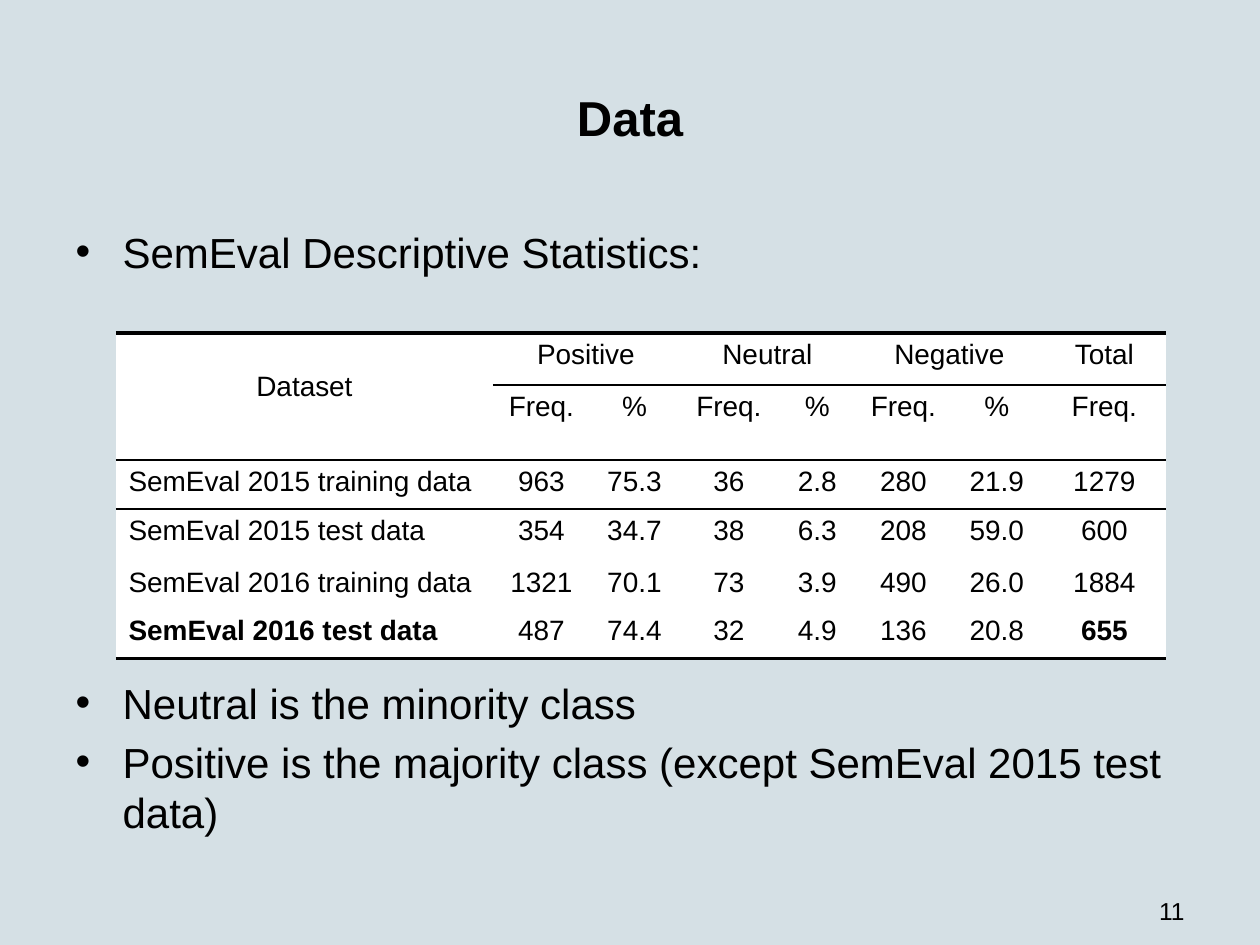
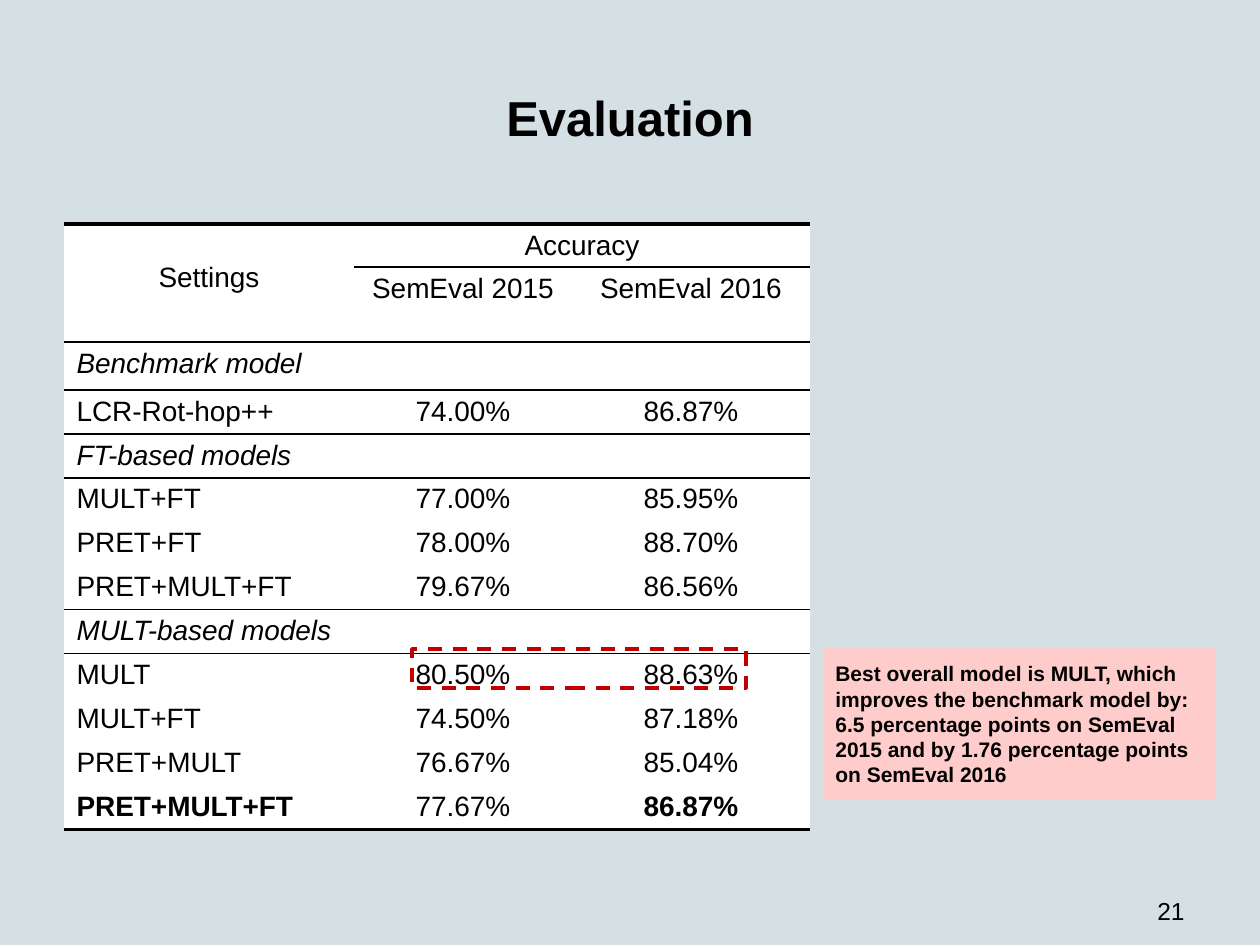
from collections import namedtuple
from dataclasses import dataclass

from lxml import etree
from pptx import Presentation
from pptx import util as u
from pptx.dml.color import RGBColor
from pptx.enum import dml, shapes, text
from pptx.oxml import ns

EMU_PER_PX = 914400 / 126
Box = namedtuple("Box", "left top width height")


@dataclass(frozen=True)
class Theme:
    font: str = "Arial"
    background: str = "D5E0E5"
    ink: str = "000000"
    paper: str = "FFFFFF"
    callout: str = "FFCCCC"
    highlight: str = "C00000"
    title: int = 28
    body: int = 24
    cell: int = 16
    number: int = 14
    note: int = 12
    heavy: int = 2
    light: int = 1


THEME = Theme()
PAGE = Box(0, 0, 1260, 945)
TITLE = Box(63, 38, 1134, 157)
BODY = Box(63, 220, 1134, 624)
NUMBER = Box(903, 860, 294, 66)
CELL_TOP, CELL_BOTTOM, CELL_LINE = 6, 3, 32
LEFT, CENTER, RIGHT = text.PP_ALIGN.LEFT, text.PP_ALIGN.CENTER, text.PP_ALIGN.RIGHT

DATA_ROWS = [
    ["Dataset", "Positive", "", "Neutral", "", "Negative", "", "Total"],
    ["", "Freq.", "%", "Freq.", "%", "Freq.", "%", "Freq."],
    ["SemEval 2015 training data", "963", "75.3", "36", "2.8", "280", "21.9", "1279"],
    ["SemEval 2015 test data", "354", "34.7", "38", "6.3", "208", "59.0", "600"],
    ["SemEval 2016 training data", "1321", "70.1", "73", "3.9", "490", "26.0", "1884"],
    ["SemEval 2016 test data", "487", "74.4", "32", "4.9", "136", "20.8", "655"],
]
ACCURACY_ROWS = [
    ["Settings", "Accuracy", ""],
    ["", "SemEval 2015", "SemEval 2016"],
    ["Benchmark model", "", ""],
    ["LCR-Rot-hop++", "74.00%", "86.87%"],
    ["FT-based models", "", ""],
    ["MULT+FT", "77.00%", "85.95%"],
    ["PRET+FT", "78.00%", "88.70%"],
    ["PRET+MULT+FT", "79.67%", "86.56%"],
    ["MULT-based models", "", ""],
    ["MULT", "80.50%", "88.63%"],
    ["MULT+FT", "74.50%", "87.18%"],
    ["PRET+MULT", "76.67%", "85.04%"],
    ["PRET+MULT+FT", "77.67%", "86.87%"],
]


def px(length):
    return u.Emu(round(length * EMU_PER_PX))


def apply(target, values):
    for name, value in values.items():
        setattr(target, name, value)


def place(shape, box):
    apply(shape, {name: px(value) for name, value in box._asdict().items()})


def write(para, words, size, align=LEFT, **style):
    span = para.add_run()
    span.text = words
    para.alignment = align
    apply(span.font, {"name": THEME.font, "size": u.Pt(size), **style})
    span.font.color.rgb = RGBColor.from_string(THEME.ink)


def add_title(page, words):
    title = page.shapes.title
    place(title, TITLE)
    apply(title.text_frame, {"vertical_anchor": text.MSO_ANCHOR.MIDDLE,
                             "auto_size": text.MSO_AUTO_SIZE.NONE})
    write(title.text_frame.paragraphs[0], words, THEME.title, CENTER, bold=True)


def add_page_number(page, number):
    frame = page.shapes.add_textbox(*map(px, NUMBER)).text_frame
    apply(frame, {"word_wrap": True, "margin_top": px(36)})
    write(frame.paragraphs[0], str(number), THEME.number, RIGHT)


def add_bullets(page, box, bullets):
    """Fill the body with (words, space before in points) pairs."""
    body = page.placeholders[1]
    place(body, box)
    frame = body.text_frame
    frame.auto_size = text.MSO_AUTO_SIZE.NONE
    for index, (words, gap) in enumerate(bullets):
        para = frame.add_paragraph() if index else frame.paragraphs[0]
        apply(para, {"space_before": u.Pt(gap), "space_after": u.Pt(2.4)})
        indent = px(47)
        properties = para._p.get_or_add_pPr()
        properties.set("marL", str(indent))
        properties.set("indent", str(-indent))
        write(para, words, THEME.body)


def set_border(cell, side, weight):
    """Draw one side of a cell, or clear it when weight is 0."""
    line = etree.SubElement(cell._tc.get_or_add_tcPr(), ns.qn(f"a:ln{side}"))
    if not weight:
        etree.SubElement(line, ns.qn("a:noFill"))
        return
    line.set("w", str(u.Pt(weight)))
    fill = etree.SubElement(line, ns.qn("a:solidFill"))
    etree.SubElement(fill, ns.qn("a:srgbClr"), val=THEME.ink)


def rule_cell(cell, row, rules):
    """Give a cell the rules that run along its upper and lower edges."""
    inside_merge = row > 0 and cell.is_spanned
    below = row + (cell.span_height if cell.is_merge_origin else 1)
    weights = {"L": 0, "R": 0,
               "T": 0 if inside_merge else rules.get(row, 0),
               "B": rules.get(below, 0)}
    for side, weight in weights.items():
        set_border(cell, side, weight)


def add_ruled_table(page, box, rows, widths, heights, groups, light_rules):
    """Add a table with a two-row header; groups are header column pairs."""
    table = page.shapes.add_table(len(rows), len(widths), *map(px, box)).table
    apply(table, {"first_row": False, "horz_banding": False})
    for column, width in zip(table.columns, widths):
        column.width = px(width)
    for line, height in zip(table.rows, heights):
        line.height = px(height)
    table.cell(0, 0).merge(table.cell(1, 0))
    for first in groups:
        table.cell(0, first).merge(table.cell(0, first + 1))

    last = len(rows) - 1
    rules = {0: THEME.heavy, len(rows): THEME.heavy}
    rules.update({edge: THEME.light for edge in light_rules})
    for r, values in enumerate(rows):
        is_section = r > 1 and not any(values[1:])
        for c, words in enumerate(values):
            cell = table.cell(r, c)
            rule_cell(cell, r, rules)
            cell.fill.solid()
            cell.fill.fore_color.rgb = RGBColor.from_string(THEME.paper)
            apply(cell, {"margin_top": px(CELL_TOP), "margin_bottom": px(CELL_BOTTOM)})
            para = cell.text_frame.paragraphs[0]
            if words:
                write(para, words, THEME.cell, CENTER if c or r == 0 else LEFT,
                      italic=is_section,
                      bold=r == last and c in (0, len(values) - 1))
            else:
                para._p.get_or_add_endParaRPr().set("sz", str(THEME.cell * 100))
    table.cell(0, 0).margin_top = px(CELL_TOP + CELL_LINE)


def add_rectangle(page, box):
    shape = page.shapes.add_shape(shapes.MSO_SHAPE.RECTANGLE, *map(px, box))
    shape.shadow.inherit = False
    return shape


def add_callout(page, box, words):
    callout = add_rectangle(page, box)
    callout.fill.solid()
    callout.fill.fore_color.rgb = RGBColor.from_string(THEME.callout)
    callout.line.fill.background()
    apply(callout.text_frame, {"word_wrap": True,
                               "vertical_anchor": text.MSO_ANCHOR.MIDDLE})
    write(callout.text_frame.paragraphs[0], words, THEME.note, bold=True)


def add_highlight(page, box):
    frame = add_rectangle(page, box)
    frame.fill.background()
    frame.line.color.rgb = RGBColor.from_string(THEME.highlight)
    apply(frame.line, {"width": u.Pt(THEME.heavy),
                       "dash_style": dml.MSO_LINE.DASH})


def add_page(deck, layout, title, number):
    page = deck.slides.add_slide(deck.slide_layouts.get_by_name(layout))
    add_title(page, title)
    add_page_number(page, number)
    return page


def add_data_page(deck):
    page = add_page(deck, "Title and Content", "Data", 11)
    add_bullets(page, BODY, [
        ("SemEval Descriptive Statistics:", 2.4),
        ("Neutral is the minority class", 226.5),
        ("Positive is the majority class (except SemEval 2015 test data)", 2.4),
    ])
    add_ruled_table(page, Box(116, 333, 1050, 326), DATA_ROWS,
                    widths=[377, 97, 89, 100, 77, 95, 92, 123],
                    heights=[52, 75, 49, 52, 48, 50],
                    groups=[1, 3, 5], light_rules=[1, 2, 3])


def add_evaluation_page(deck):
    page = add_page(deck, "Title Only", "Evaluation", 21)
    add_ruled_table(page, Box(64, 224, 746, 606), ACCURACY_ROWS,
                    widths=[290, 218, 238],
                    heights=[43, 75, 48] + [44] * 10,
                    groups=[1], light_rules=[1, 2, 3, 4, 5, 8, 9])
    add_callout(page, Box(823, 648, 392, 152),
                "Best overall model is MULT, which improves the benchmark model "
                "by: 6.5 percentage points on SemEval 2015 and by 1.76 percentage "
                "points on SemEval 2016")
    add_highlight(page, Box(412, 649, 334, 39))


def main():
    deck = Presentation()
    apply(deck, {"slide_width": px(PAGE.width), "slide_height": px(PAGE.height)})
    backdrop = deck.slide_master.background.fill
    backdrop.solid()
    backdrop.fore_color.rgb = RGBColor.from_string(THEME.background)
    add_data_page(deck)
    add_evaluation_page(deck)
    deck.save("out.pptx")


if __name__ == "__main__":
    main()
